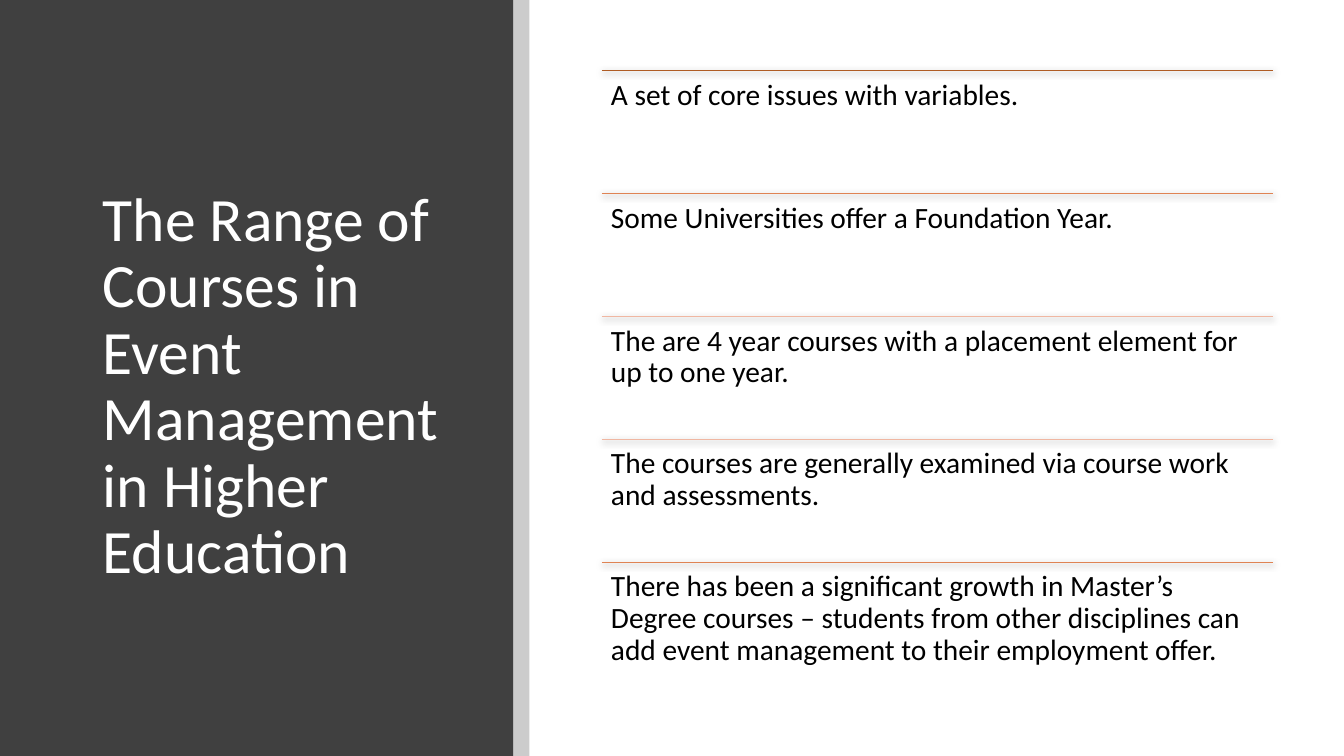
from lxml.etree import SubElement
from pptx import Presentation
from pptx.dml.color import RGBColor
from pptx.enum.shapes import MSO_CONNECTOR, MSO_SHAPE
from pptx.enum.text import MSO_ANCHOR
from pptx.oxml import parse_xml
from pptx.oxml.ns import nsdecls, qn
from pptx.util import Inches, Pt

BLACK = RGBColor(0x00, 0x00, 0x00)
WHITE = RGBColor(0xFF, 0xFF, 0xFF)
DARK = RGBColor(0x40, 0x40, 0x40)
BROWN = RGBColor(0xAF, 0x5C, 0x24)
ORANGE = RGBColor(0xDF, 0x83, 0x53)
PEACH = RGBColor(0xF0, 0xB7, 0xA2)

TITLE = "The Range of Courses in Event Management in Higher Education"
ROWS = [
    ("A set of core issues with variables.", BROWN),
    ("Some Universities offer a Foundation Year.", ORANGE),
    ("The are 4 year courses with a placement element for up to one year.", PEACH),
    ("The courses are generally examined via course work and assessments.", PEACH),
    ("There has been a significant growth in Master’s Degree courses – students "
     "from other disciplines can add event management to their employment offer.", ORANGE),
]
LEFT, TOP, WIDTH, STEP = 5.97, 0.7, 6.66, 1.22

SHADOW = (
    f'<a:effectLst {nsdecls("a")}>'
    '<a:outerShdw blurRad="57150" dist="19050" dir="5400000" algn="ctr" rotWithShape="0">'
    '<a:srgbClr val="000000"><a:alpha val="63000"/></a:srgbClr>'
    '</a:outerShdw></a:effectLst>'
)


class Painter:
    """Draws panels, rules and text in one style on the current slide."""

    font = "Calibri"

    def __init__(self, slide):
        self.shapes = slide.shapes

    def panel(self, left, width, color, alpha=100):
        box = self.shapes.add_shape(
            MSO_SHAPE.RECTANGLE, Inches(left), 0, Inches(width), Inches(7.5))
        box.shadow.inherit = False
        box.fill.solid()
        box.fill.fore_color.rgb = color
        box.line.fill.background()
        if alpha < 100:
            tint = box.fill._xPr.find(qn("a:solidFill"))[0]
            SubElement(tint, qn("a:alpha")).set("val", str(alpha * 1000))

    def rule(self, left, top, width, color):
        line = self.shapes.add_connector(
            MSO_CONNECTOR.STRAIGHT, Inches(left), Inches(top),
            Inches(left + width), Inches(top))
        line.line.color.rgb = color
        line.line.width = Pt(0.5)
        line._element.spPr.append(parse_xml(SHADOW))

    def text(self, words, left, top, width, height, size, color,
             anchor=MSO_ANCHOR.TOP, pad=(0.09, 0.09)):
        box = self.shapes.add_textbox(
            Inches(left), Inches(top), Inches(width), Inches(height))
        frame = box.text_frame
        frame.word_wrap = True
        frame.vertical_anchor = anchor
        frame.margin_left = frame.margin_right = Inches(pad[0])
        frame.margin_top = frame.margin_bottom = Inches(pad[1])
        para = frame.paragraphs[0]
        para.text = words
        para.line_spacing = 0.9
        para.font.name = self.font
        para.font.size = Pt(size)
        para.font.color.rgb = color


def main():
    deck = Presentation()
    deck.slide_width, deck.slide_height = Inches(13.33), Inches(7.5)
    paint = Painter(deck.slides.add_slide(deck.slide_layouts[6]))
    paint.panel(0, 5.09, DARK)
    paint.panel(5.09, 0.16, BLACK, alpha=20)
    paint.text(TITLE, 0.92, 0.89, 3.65, 5.91, 44, WHITE, MSO_ANCHOR.MIDDLE, (0.1, 0.05))
    for index, (words, color) in enumerate(ROWS):
        top = TOP + index * STEP
        paint.rule(LEFT, top, WIDTH, color)
        paint.text(words, LEFT, top, WIDTH, STEP, 21, BLACK)
    deck.save("out.pptx")


if __name__ == "__main__":
    main()
